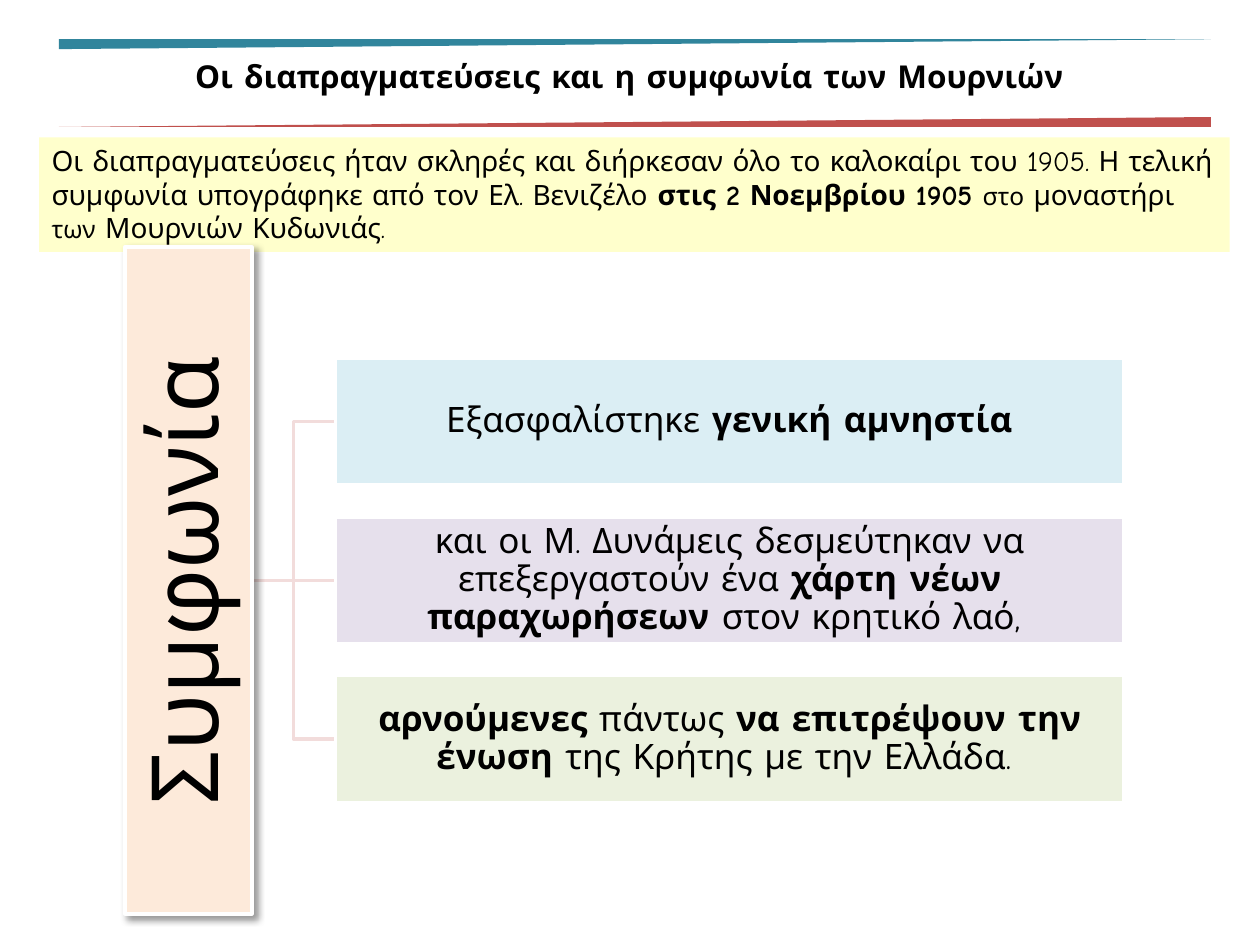
from lxml.etree import SubElement
from pptx import Presentation
from pptx.dml.color import RGBColor
from pptx.enum.shapes import MSO_CONNECTOR, MSO_SHAPE
from pptx.enum.text import MSO_ANCHOR, MSO_AUTO_SIZE, PP_ALIGN
from pptx.oxml.ns import qn
from pptx.util import Cm, Pt

COLORS = {
    "text": "000000", "white": "FFFFFF", "intro": "FFFFCC",
    "teal": "31859C", "red": "C0504D", "link": "F2DCDB", "root": "FDEADA",
    "blue": "DBEEF4", "purple": "E6E0EC", "green": "EBF1DE",
}
FONT = "Comic Neue"


def rgb(name):
    return RGBColor.from_string(COLORS[name])


def write(sp, runs, size, align=PP_ALIGN.CENTER, anchor=MSO_ANCHOR.MIDDLE,
          inset=None, spacing=None, autosize=MSO_AUTO_SIZE.NONE):
    tf = sp.text_frame
    tf.word_wrap = True
    tf.auto_size = autosize
    tf.vertical_anchor = anchor
    if inset is not None:
        tf.margin_left = tf.margin_right = tf.margin_top = tf.margin_bottom = Cm(inset)
    p = tf.paragraphs[0]
    p.alignment = align
    p.line_spacing = spacing
    for text, bold, *own_size in runs:
        r = p.add_run()
        r.text = text
        r.font.name = FONT
        r.font.size = Pt(own_size[0] if own_size else size)
        r.font.bold = bold
        r.font.color.rgb = rgb("text")


prs = Presentation()
prs.slide_width, prs.slide_height = Cm(25.4), Cm(19.05)
s = prs.slides.add_slide(prs.slide_layouts[5])

title = s.shapes.title
title.left, title.top, title.width, title.height = Cm(1.19), Cm(1.04), Cm(23.22), Cm(1.27)
title.fill.solid()
title.fill.fore_color.rgb = rgb("white")
write(title, [("Οι διαπραγματεύσεις και η συμφωνία των Μουρνιών ", True)], 18,
      anchor=MSO_ANCHOR.TOP, inset=0.1)

for top, color, rotation in [(0.79, "teal", 180), (2.36, "red", 0)]:
    sp = s.shapes.add_shape(MSO_SHAPE.RIGHT_TRIANGLE, Cm(1.19), Cm(top), Cm(23.22), Cm(0.2))
    sp.shadow.inherit = False
    sp.fill.solid()
    sp.fill.fore_color.rgb = rgb(color)
    sp.line.fill.background()
    sp.rotation = rotation
    sp.element.spPr.find(qn("a:xfrm")).set("flipH", "1")

intro = s.shapes.add_textbox(Cm(0.79), Cm(2.77), Cm(24), Cm(2.31))
intro.fill.solid()
intro.fill.fore_color.rgb = rgb("intro")
write(intro, [
    ("Οι διαπραγματεύσεις ήταν σκληρές και διήρκεσαν όλο το καλοκαίρι του 1905. "
     "Η τελική συμφωνία υπογράφηκε από τον Ελ. Βενιζέλο ", False),
    ("στις 2 Νοεμβρίου 1905 ", True),
    ("στο", False, 14),
    (" μοναστήρι ", False),
    ("των", False, 14),
    (" Μουρνιών Κυδωνιάς.", False),
], 16, align=PP_ALIGN.LEFT, anchor=MSO_ANCHOR.TOP, autosize=MSO_AUTO_SIZE.SHAPE_TO_FIT_TEXT)

middle, pitch, box_height = 11.7, 3.2, 2.56
root_right, box_left, box_width = 5.08, 6.76, 15.9
root_length = 13.44
terms = [
    ("blue", [(" Εξασφαλίστηκε ", False), ("γενική αμνηστία ", True)]),
    ("purple", [("και οι Μ. Δυνάμεις δεσμεύτηκαν να επεξεργαστούν ένα ", False),
                ("χάρτη νέων παραχωρήσεων ", True), ("στον κρητικό λαό, ", False)]),
    ("green", [("αρνούμενες", True), (" πάντως ", False),
               ("να επιτρέψουν την ένωση ", True), ("της Κρήτης με την Ελλάδα. ", False)]),
]

for i in range(len(terms)):
    kind = MSO_CONNECTOR.STRAIGHT if i == 1 else MSO_CONNECTOR.ELBOW
    link = s.shapes.add_connector(kind, Cm(root_right), Cm(middle),
                                  Cm(box_left), Cm(middle + (i - 1) * pitch))
    link.line.color.rgb = rgb("link")
    link.line.width = Pt(2)
    SubElement(link.element.spPr, qn("a:effectLst"))

root_left = root_right - box_height / 2 - root_length / 2
boxes = [(root_left, middle, root_length, "root", [("Συμφωνία", False)], 53, 0.1, 270)]
boxes += [(box_left, middle + (i - 1) * pitch, box_width, color, runs, 20, 0.03, 0)
          for i, (color, runs) in enumerate(terms)]
for left, center, width, color, runs, size, inset, rotation in boxes:
    sp = s.shapes.add_shape(MSO_SHAPE.RECTANGLE, Cm(left), Cm(center - box_height / 2),
                            Cm(width), Cm(box_height))
    sp.shadow.inherit = False
    sp.fill.solid()
    sp.fill.fore_color.rgb = rgb(color)
    sp.line.color.rgb = rgb("white")
    sp.line.width = Pt(2)
    sp.rotation = rotation
    write(sp, runs, size, inset=inset, spacing=0.9)
    if color == "root":
        effects = sp.element.spPr.find(qn("a:effectLst"))
        shadow = SubElement(effects, qn("a:outerShdw"), blurRad=str(Pt(4)), dist=str(Pt(3)),
                            dir="2700000", algn="tl", rotWithShape="0")
        tint = SubElement(shadow, qn("a:srgbClr"), val=COLORS["text"])
        SubElement(tint, qn("a:alpha"), val="40000")

prs.save("out.pptx")
